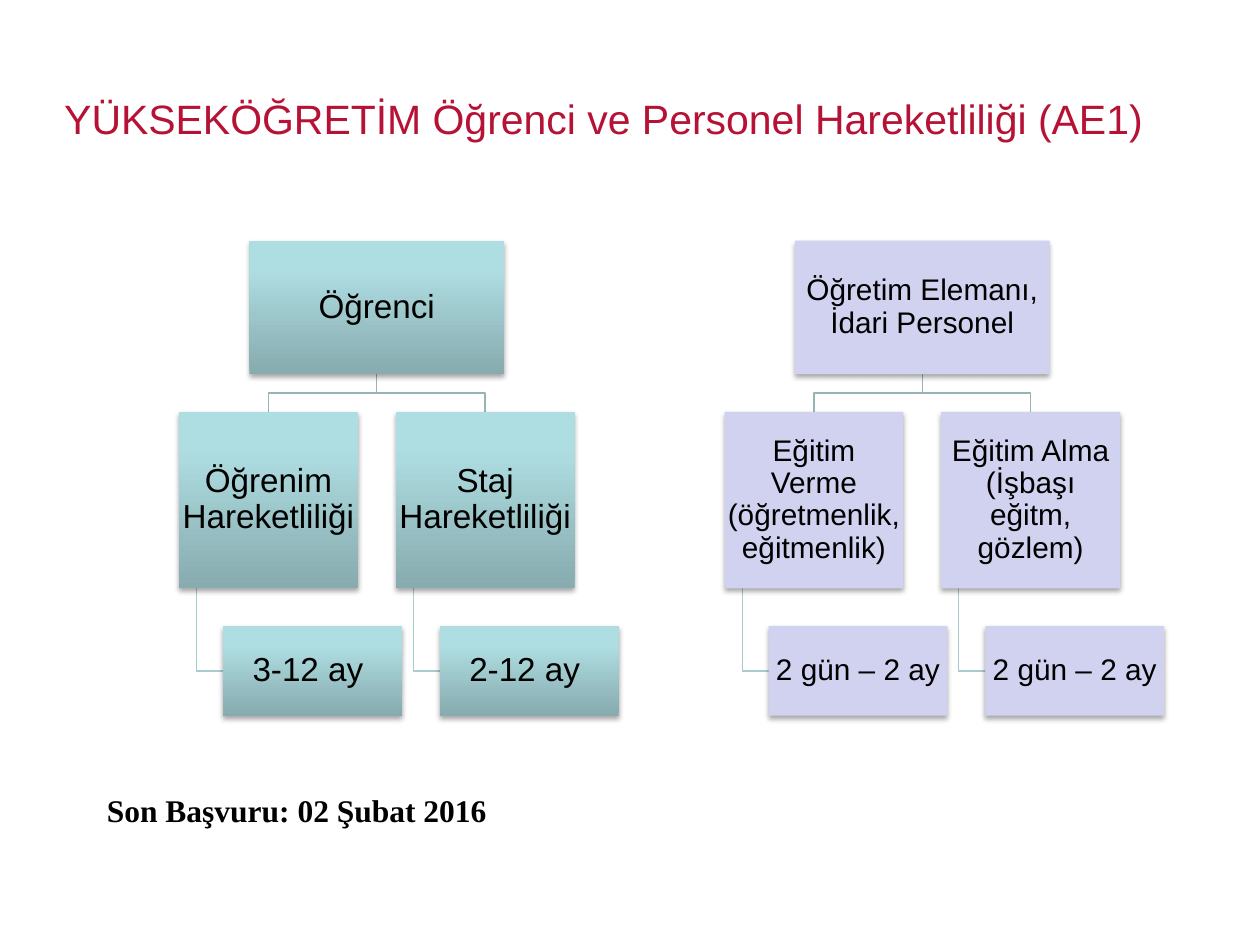
from lxml.etree import SubElement
from pptx import Presentation
from pptx.dml.color import RGBColor
from pptx.enum.shapes import MSO_SHAPE
from pptx.enum.text import MSO_ANCHOR, PP_ALIGN
from pptx.oxml.ns import qn
from pptx.util import Inches, Pt

TITLE = "YÜKSEKÖĞRETİM Öğrenci ve Personel Hareketliliği (AE1)"
DEADLINE = "Son Başvuru: 02 Şubat 2016"

CRIMSON = RGBColor(0xB6, 0x12, 0x35)
BLACK = RGBColor(0, 0, 0)
TEAL_DARK = RGBColor(0x87, 0xAB, 0xAE)
TEAL_LIGHT = RGBColor(0xAF, 0xDE, 0xE2)
LAVENDER = RGBColor(0xD1, 0xD1, 0xF0)
BRANCH_LINE = RGBColor(0x96, 0xB3, 0xB6)
DETAIL_LINE = RGBColor(0xAA, 0xCB, 0xCE)

# Each tree: left edge, font size, fill colours (dark to light), root, branches with durations
TREES = [
    (1.42, 19, (TEAL_DARK, TEAL_LIGHT), "Öğrenci",
     [("Öğrenim Hareketliliği", "3-12 ay "), ("Staj Hareketliliği", "2-12 ay ")]),
    (5.75, 17, (LAVENDER,), "Öğretim Elemanı, İdari Personel",
     [("Eğitim Verme (öğretmenlik, eğitmenlik)", "2 gün – 2 ay"),
      ("Eğitim Alma (İşbaşı eğitm, gözlem)", "2 gün – 2 ay")]),
]

ROOT_WIDTH, ROOT_HEIGHT = 2.02, 1.06
BOX_WIDTH, BRANCH_HEIGHT, DETAIL_HEIGHT = 1.42, 1.4, 0.71
BRANCH_STEP = 1.72
LEVEL_GAP = 0.3
ROOT_TOP = 1.91
BRANCH_TOP = ROOT_TOP + ROOT_HEIGHT + LEVEL_GAP
DETAIL_TOP = BRANCH_TOP + BRANCH_HEIGHT + LEVEL_GAP
DETAIL_INDENT = 0.35
STEM_INDENT = 0.14


def add_soft_shadow(shape):
    shape.shadow.inherit = False
    effects = shape._element.spPr.find(qn("a:effectLst"))
    shadow = SubElement(effects, qn("a:outerShdw"), blurRad=str(Pt(3.1)), dist=str(Pt(1.8)),
                        dir="5400000", rotWithShape="0")
    color = SubElement(shadow, qn("a:srgbClr"), val="000000")
    SubElement(color, qn("a:alpha"), val="35000")


def fill_box(fill, colors):
    if len(colors) == 1:
        fill.solid()
        fill.fore_color.rgb = colors[0]
        return
    fill.gradient()
    fill.gradient_angle = 90
    for stop, color, position in zip(fill.gradient_stops, colors, (0, 0.8)):
        stop.color.rgb = color
        stop.position = position


def add_box(shapes, left, top, width, height, text, size, colors):
    box = shapes.add_shape(MSO_SHAPE.RECTANGLE, Inches(left), Inches(top),
                           Inches(width), Inches(height))
    fill_box(box.fill, colors)
    box.line.fill.background()
    add_soft_shadow(box)
    frame = box.text_frame
    frame.word_wrap = True
    frame.vertical_anchor = MSO_ANCHOR.MIDDLE
    frame.margin_left = frame.margin_right = Inches(0.01)
    frame.margin_top = frame.margin_bottom = Inches(0.01)
    frame.text = text
    paragraph = frame.paragraphs[0]
    paragraph.alignment = PP_ALIGN.CENTER
    paragraph.line_spacing = 0.9
    set_font(paragraph, "Arial", size, BLACK)


def add_elbow(shapes, points, color):
    start, *rest = [(Inches(x), Inches(y)) for x, y in points]
    builder = shapes.build_freeform(*start)
    builder.add_line_segments(rest, close=False)
    elbow = builder.convert_to_shape()
    elbow.fill.background()
    elbow.line.color.rgb = color
    elbow.line.width = Pt(0.75)
    elbow.shadow.inherit = False


def set_font(paragraph, name, size, color, bold=False):
    font = paragraph.font
    font.name, font.size, font.bold = name, Pt(size), bold
    font.color.rgb = color


def add_tree(slide, left, size, colors, root, branches):
    shapes = slide.shapes.add_group_shape().shapes
    center = left + (BRANCH_STEP + BOX_WIDTH) / 2
    root_bottom = ROOT_TOP + ROOT_HEIGHT
    middle = root_bottom + LEVEL_GAP / 2
    branch_bottom = BRANCH_TOP + BRANCH_HEIGHT
    detail_middle = DETAIL_TOP + DETAIL_HEIGHT / 2
    lefts = [left + index * BRANCH_STEP for index in range(len(branches))]

    for x in lefts:
        branch_center = x + BOX_WIDTH / 2
        stem = x + STEM_INDENT
        add_elbow(shapes, [(stem, branch_bottom), (stem, detail_middle),
                           (x + DETAIL_INDENT, detail_middle)], DETAIL_LINE)
        add_elbow(shapes, [(center, root_bottom), (center, middle),
                           (branch_center, middle), (branch_center, BRANCH_TOP)], BRANCH_LINE)

    add_box(shapes, center - ROOT_WIDTH / 2, ROOT_TOP, ROOT_WIDTH, ROOT_HEIGHT,
            root, size, colors)
    for x, (branch, duration) in zip(lefts, branches):
        add_box(shapes, x, BRANCH_TOP, BOX_WIDTH, BRANCH_HEIGHT, branch, size, colors)
        add_box(shapes, x + DETAIL_INDENT, DETAIL_TOP, BOX_WIDTH, DETAIL_HEIGHT,
                duration, size, colors)


def main():
    presentation = Presentation()
    presentation.slide_width, presentation.slide_height = Inches(10), Inches(7.5)
    slide = presentation.slides.add_slide(presentation.slide_layouts[5])

    title = slide.shapes.title
    title.left, title.top = Inches(0.41), Inches(0.6)
    title.width, title.height = Inches(9.18), Inches(0.67)
    title.text_frame.text = TITLE
    title.text_frame.vertical_anchor = MSO_ANCHOR.MIDDLE
    paragraph = title.text_frame.paragraphs[0]
    paragraph.alignment = PP_ALIGN.LEFT
    set_font(paragraph, "Arial", 23.4, CRIMSON)

    for tree in TREES:
        add_tree(slide, *tree)

    deadline = slide.shapes.add_textbox(Inches(0.75), Inches(6.23), Inches(3.5), Inches(0.4))
    deadline.text_frame.word_wrap = True
    deadline.text_frame.text = DEADLINE
    set_font(deadline.text_frame.paragraphs[0], "Times New Roman", 18, BLACK, bold=True)

    presentation.save("out.pptx")


if __name__ == "__main__":
    main()
